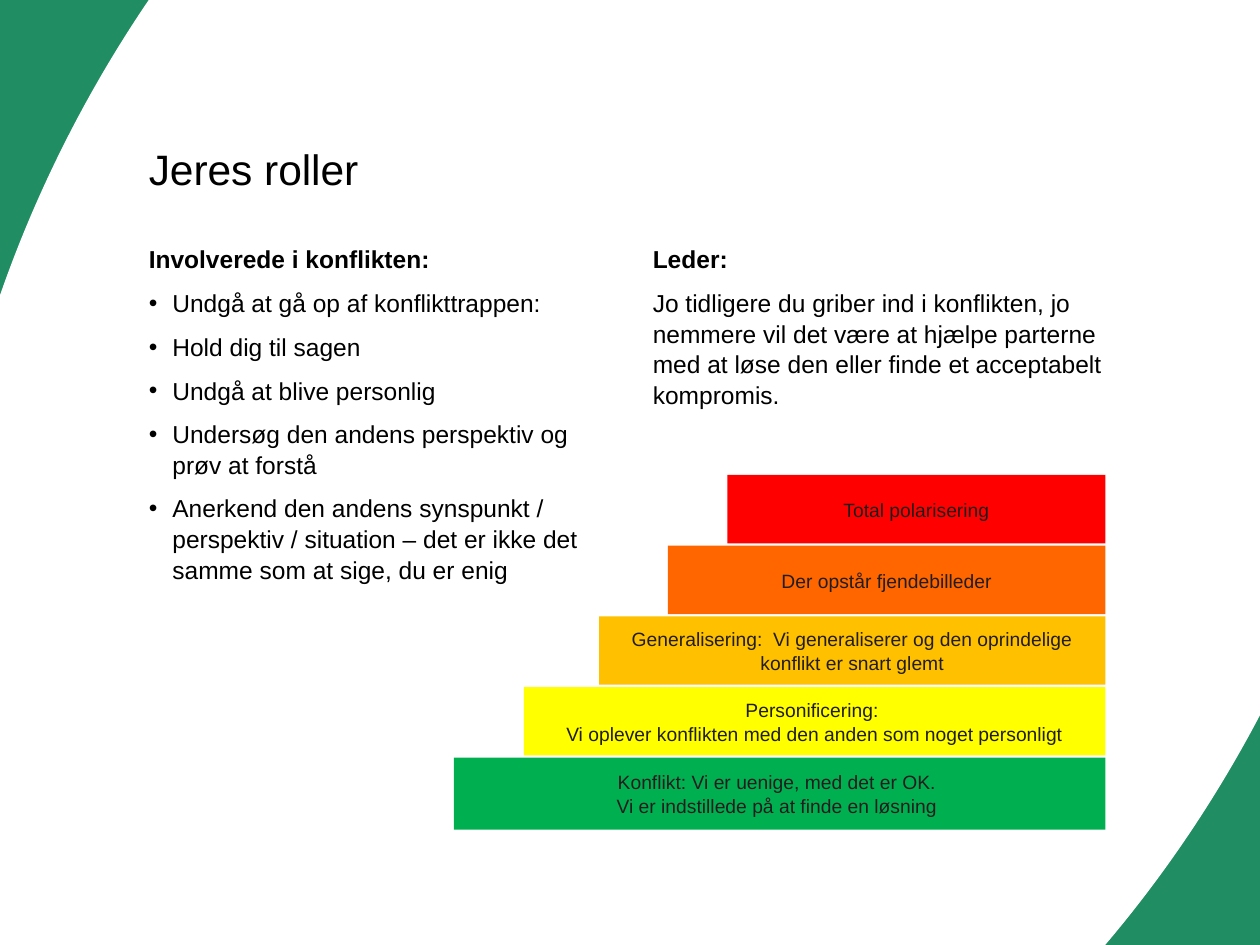
from pptx import Presentation
from pptx.dml.color import RGBColor
from pptx.enum.shapes import MSO_SHAPE as Shape
from pptx.enum.text import MSO_ANCHOR as Anchor, MSO_AUTO_SIZE as AutoSize, PP_ALIGN as Align
from pptx.oxml.ns import qn
from pptx.util import Pt

GREEN = RGBColor(0x20, 0x8D, 0x62)
WHITE = RGBColor(0xFF, 0xFF, 0xFF)
BLACK = RGBColor(0, 0, 0)
INK = RGBColor(0x21, 0x1D, 0x1E)

# Left edge, colour and lines of each step, from the top down
STEPS = [
    (415.7, RGBColor(0xFF, 0, 0), ["Total polarisering"]),
    (381.7, RGBColor(0xFF, 0x66, 0), ["Der opstår fjendebilleder"]),
    (342.3, RGBColor(0xFF, 0xC0, 0),
     ["Generalisering:  Vi generaliserer og den oprindelige konflikt er snart glemt"]),
    (299.4, RGBColor(0xFF, 0xFF, 0),
     ["Personificering: ", "Vi oplever konflikten med den anden som noget personligt"]),
    (259.4, RGBColor(0, 0xB0, 0x50),
     ["Konflikt: Vi er uenige, med det er OK. ", "Vi er indstillede på at finde en løsning "]),
]
STEP_TOP, STEP_PITCH, STEP_RIGHT = 271.4, 40.4, 631.7
STEP_HEIGHT, BOTTOM_STEP_HEIGHT = 39.1, 41.1

INVOLVED = [
    "Undgå at gå op af konflikttrappen:",
    "Hold dig til sagen",
    "Undgå at blive personlig",
    "Undersøg den andens perspektiv og prøv at forstå",
    "Anerkend den andens synspunkt / perspektiv / situation – det er ikke det "
    "samme som at sige, du er enig",
]
LEADER = [
    "Jo tidligere du griber ind i konflikten, jo nemmere vil det være at hjælpe "
    "parterne med at løse den eller finde et acceptabelt kompromis.",
]


class SlideBuilder:
    font = "Arial"
    title_size, body_size, step_size = 24.3, 14, 11
    line_spacing, paragraph_gap, bullet_indent = 1.04, 7.5, 13.5

    def __init__(self, page):
        self.page = page

    def place(self, box, left, top, width, height):
        box.left, box.top, box.width, box.height = map(Pt, (left, top, width, height))

    def add_span(self, para, text, size, color, bold=False):
        span = para.add_run()
        span.text = text
        span.font.name, span.font.size, span.font.bold = self.font, Pt(size), bold
        span.font.color.rgb = color

    def add_plain_shape(self, kind, bounds, color):
        shape = self.page.shapes.add_shape(kind, *map(Pt, bounds))
        shape.shadow.inherit = False
        shape.fill.solid()
        shape.fill.fore_color.rgb = color
        shape.line.fill.background()
        return shape

    def add_backdrop(self, bounds, rotation):
        """Lay a tilted white ellipse behind everything else."""
        self.page.background.fill.solid()
        self.page.background.fill.fore_color.rgb = GREEN
        ellipse = self.add_plain_shape(Shape.OVAL, bounds, WHITE)
        ellipse.rotation = rotation
        self.page.shapes.element.insert(2, ellipse.element)

    def set_title(self, text, *bounds):
        title = self.page.shapes.title
        self.place(title, *bounds)
        frame = title.text_frame
        frame.auto_size = AutoSize.NONE
        frame.vertical_anchor = Anchor.MIDDLE
        para = frame.paragraphs[0]
        para.alignment, para.line_spacing = Align.LEFT, 0.9
        self.add_span(para, text, self.title_size, BLACK)

    def set_bullet(self, para, bulleted):
        indent = Pt(self.bullet_indent) if bulleted else 0
        properties = para._p.get_or_add_pPr()
        properties.set("marL", str(indent))
        properties.set("indent", str(-indent))
        bullet = properties.makeelement(qn("a:buChar" if bulleted else "a:buNone"), {})
        if bulleted:
            bullet.set("char", "•")
        properties.append(bullet)

    def fill_column(self, index, heading, texts, bulleted, *bounds):
        box = self.page.placeholders[index]
        self.place(box, *bounds)
        frame = box.text_frame
        frame.auto_size = AutoSize.NONE
        for number, text in enumerate([heading, *texts]):
            is_heading = number == 0
            para = frame.paragraphs[0] if is_heading else frame.add_paragraph()
            self.set_bullet(para, bulleted and not is_heading)
            para.line_spacing = self.line_spacing
            para.space_before = Pt(0 if is_heading else self.paragraph_gap)
            self.add_span(para, text, self.body_size, BLACK, bold=is_heading)

    def add_step(self, bounds, color, lines):
        frame = self.add_plain_shape(Shape.RECTANGLE, bounds, color).text_frame
        frame.word_wrap = True
        frame.vertical_anchor = Anchor.MIDDLE
        para = frame.paragraphs[0]
        para.alignment, para.line_spacing = Align.CENTER, self.line_spacing
        for number, line in enumerate(lines):
            if number:
                para.add_line_break()
            self.add_span(para, line, self.step_size, INK)


def main():
    deck = Presentation()
    deck.slide_width, deck.slide_height = Pt(720), Pt(540)
    builder = SlideBuilder(deck.slides.add_slide(deck.slide_layouts[3]))

    builder.add_backdrop((2.9, -285.8, 756.7, 1051.2), 29)
    builder.set_title("Jeres roller", 77.8, 82.8, 620.6, 31)
    builder.fill_column(1, "Involverede i konflikten:", INVOLVED, True, 77.8, 135.4, 279.4, 342.7)
    builder.fill_column(2, "Leder:", LEADER, False, 365.8, 135.4, 276.5, 342.7)

    for level, (left, color, lines) in reversed(list(enumerate(STEPS))):
        is_bottom = level == len(STEPS) - 1
        height = BOTTOM_STEP_HEIGHT if is_bottom else STEP_HEIGHT
        top = STEP_TOP + level * STEP_PITCH
        builder.add_step((left, top, STEP_RIGHT - left, height), color, lines)

    deck.save("out.pptx")


if __name__ == "__main__":
    main()
